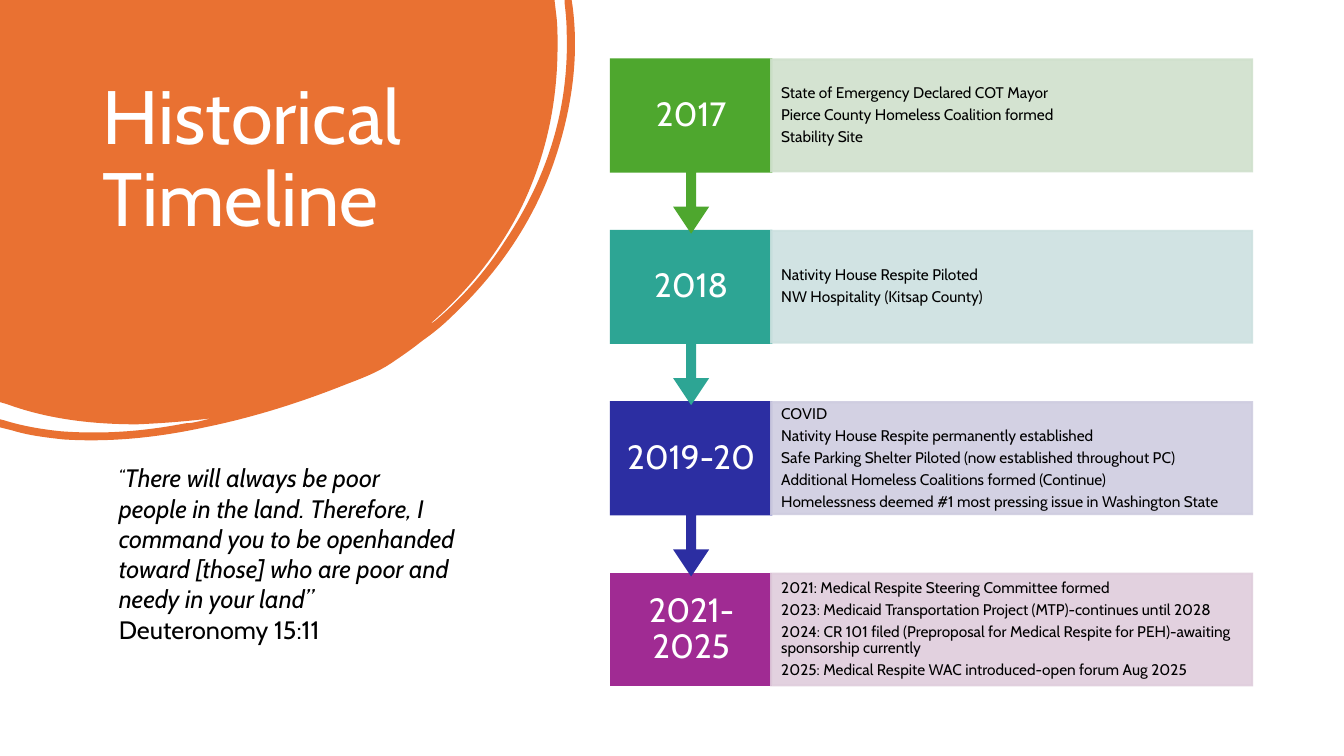
import pptx
import pptx.dml.color
import pptx.enum.shapes
import pptx.enum.text
import pptx.oxml
import pptx.oxml.ns
import pptx.util

Inches = pptx.util.Inches
Pt = pptx.util.Pt
RGBColor = pptx.dml.color.RGBColor
SHAPE = pptx.enum.shapes.MSO_SHAPE
ALIGN = pptx.enum.text.PP_ALIGN
ANCHOR = pptx.enum.text.MSO_ANCHOR
qn = pptx.oxml.ns.qn

FONT = "Cabin"
HARD_SPACE = chr(160)
WHITE = RGBColor(0xFF, 0xFF, 0xFF)
BLACK = RGBColor(0x00, 0x00, 0x00)
ORANGE = RGBColor(0xE9, 0x71, 0x32)
GREEN = RGBColor(0x4E, 0xA7, 0x2E)
PALE_GREEN = RGBColor(0xD0, 0xE1, 0xCD)
TEAL = RGBColor(0x2D, 0xA5, 0x94)
PALE_TEAL = RGBColor(0xCD, 0xE1, 0xE0)
BLUE = RGBColor(0x2C, 0x2E, 0xA2)
PALE_BLUE = RGBColor(0xCF, 0xCD, 0xE0)
PURPLE = RGBColor(0xA0, 0x2B, 0x93)
PALE_PURPLE = RGBColor(0xDF, 0xCD, 0xDC)

TOP, PITCH = 0.59, 1.7
YEAR_LEFT, YEAR_WIDTH = 6.06, 1.59
EVENT_LEFT, EVENT_WIDTH = 7.65, 4.77
BOX_HEIGHT, CALLOUT_HEIGHT = 1.11, 1.71

STAGES = [
    ("2017", GREEN, PALE_GREEN, [
        "State of Emergency Declared COT Mayor",
        "Pierce County Homeless Coalition formed",
        "Stability Site"]),
    ("2018", TEAL, PALE_TEAL, [
        "Nativity House Respite Piloted",
        "NW Hospitality (Kitsap County)"]),
    ("2019-20", BLUE, PALE_BLUE, [
        "COVID",
        "Nativity House Respite permanently established",
        "Safe Parking Shelter Piloted (now established throughout PC)",
        "Additional Homeless Coalitions formed (Continue)",
        "Homelessness deemed #1 most pressing issue in Washington State"]),
    ("2021-2025", PURPLE, PALE_PURPLE, [
        "2021: Medical Respite Steering Committee formed",
        "2023: Medicaid Transportation Project (MTP)-continues until 2028",
        "2024: CR 101 filed (Preproposal for Medical Respite for PEH)-awaiting "
        "sponsorship currently",
        "2025: Medical Respite WAC introduced-open forum Aug 2025"]),
]

BLOB = [
    (0, 0), (5.5, 0), (5.52, 0.17),
    (5.53, 0.26, 5.53, 0.36, 5.53, 0.45), (5.53, 1.01, 5.42, 1.54, 5.18, 2.04),
    (4.96, 2.49, 4.65, 2.88, 4.27, 3.21), (4.29, 3.21, 4.3, 3.19, 4.32, 3.18),
    (4.59, 2.95, 4.82, 2.69, 5.01, 2.39), (5.43, 1.76, 5.65, 1.07, 5.62, 0.3),
    (5.62, 0.21, 5.61, 0.12, 5.6, 0.03), (5.6, 0), (5.67, 0), (5.68, 0.07),
    (5.74, 0.54, 5.68, 1.02, 5.53, 1.5), (5.33, 2.14, 4.97, 2.68, 4.48, 3.14),
    (4.39, 3.23, 4.29, 3.31, 4.19, 3.38), (4.09, 3.46, 3.99, 3.53, 3.87, 3.61),
    (3.75, 3.69, 3.6, 3.75, 3.44, 3.81), (2.99, 3.99, 2.52, 4.14, 2.03, 4.24),
    (1.57, 4.34, 1.1, 4.39, 0.63, 4.36), (0.45, 4.34, 0.28, 4.32, 0.12, 4.27),
    (0, 4.24), (0, 4.16), (0.04, 4.17),
    (0.23, 4.23, 0.42, 4.26, 0.61, 4.28), (1.03, 4.31, 1.43, 4.28, 1.84, 4.2),
    (1.89, 4.2, 1.93, 4.19, 1.98, 4.18), (2.02, 4.17, 2.06, 4.16, 2.1, 4.15),
    (1.86, 4.18, 1.61, 4.2, 1.36, 4.21), (0.92, 4.21, 0.48, 4.16, 0.07, 4.01),
    (0, 3.99),
]


def style_font(font, size, color):
    """Give a font the deck's typeface with a size and colour."""
    font.name = FONT
    font.size = Pt(size)
    font.color.rgb = color


def bend_segments(shape, segments):
    """Turn each line whose segment has control points into a Bézier curve."""
    lines = list(shape.element.spPr.iter(qn("a:lnTo")))
    for line, segment in zip(lines, segments):
        if len(segment) == 6:
            line.tag = qn("a:cubicBezTo")
            for index in (0, 1):
                point = line.makeelement(qn("a:pt"), {
                    "x": str(Inches(segment[2 * index])),
                    "y": str(Inches(segment[2 * index + 1]))})
                line.insert(index, point)


def add_blob(slide):
    """Draw the orange corner shape with its outer ring."""
    start, *segments = BLOB
    builder = slide.shapes.build_freeform(*start)
    ends = [(Inches(segment[-2]), Inches(segment[-1])) for segment in segments]
    builder.add_line_segments(ends, close=True)
    blob = builder.convert_to_shape()
    bend_segments(blob, segments)
    blob.shadow.inherit = False
    blob.fill.solid()
    blob.fill.fore_color.rgb = ORANGE
    blob.line.fill.background()
    return blob


def place_title(title, text):
    """Move and format the title placeholder."""
    title.left, title.top = Inches(0.92), Inches(0.74)
    title.width, title.height = Inches(3.52), Inches(2.22)
    frame = title.text_frame
    frame.text = text
    frame.word_wrap = True
    frame.auto_size = pptx.enum.text.MSO_AUTO_SIZE.NONE
    frame.vertical_anchor = ANCHOR.TOP
    para = frame.paragraphs[0]
    para.alignment = ALIGN.LEFT
    para.line_spacing = 0.9
    style_font(para.runs[0].font, 54, WHITE)


def add_box(slide, kind, left, top, width, height, color):
    """Add a filled shape with a sharp-cornered outline of the same colour."""
    box = slide.shapes.add_shape(
        kind, Inches(left), Inches(top), Inches(width), Inches(height))
    box.shadow.inherit = False
    box.fill.solid()
    box.fill.fore_color.rgb = color
    box.line.color.rgb = color
    box.line.width = Pt(1.5)
    outline = box.element.spPr.find(qn("a:ln"))
    outline.append(outline.makeelement(qn("a:miter"), {"lim": "800000"}))
    return box


def fill_text(box, lines, size, color, alignment, side, edge):
    """Write vertically centred paragraphs into a box."""
    frame = box.text_frame
    frame.word_wrap = True
    frame.vertical_anchor = ANCHOR.MIDDLE
    frame.margin_left = frame.margin_right = Inches(side)
    frame.margin_top = frame.margin_bottom = Inches(edge)
    frame.text = "\n".join(lines)
    for para in frame.paragraphs:
        para.alignment = alignment
        para.line_spacing = 0.9
        para.space_after = Pt(0.35 * size)
        style_font(para.runs[0].font, size, color)


def make_translucent(box, percent):
    """Set the opacity of a box's fill and outline."""
    for color in box.element.spPr.iter(qn("a:srgbClr")):
        color.append(color.makeelement(qn("a:alpha"), {"val": str(percent * 1000)}))


def add_stage(slide, top, stage, is_last):
    """Add a year box, with an arrow unless it is last, and its events."""
    year, color, pale, events = stage
    if is_last:
        box = add_box(slide, SHAPE.RECTANGLE, YEAR_LEFT, top, YEAR_WIDTH, BOX_HEIGHT, color)
    else:
        box = add_box(slide, SHAPE.DOWN_ARROW_CALLOUT, YEAR_LEFT, top,
                      YEAR_WIDTH, CALLOUT_HEIGHT, color)
        for index, value in enumerate((0.05, 0.1, 0.15, 0.65)):
            box.adjustments[index] = value
    fill_text(box, [year], 24, WHITE, ALIGN.CENTER, 0.11, 0.19)
    panel = add_box(slide, SHAPE.RECTANGLE, EVENT_LEFT, top, EVENT_WIDTH, BOX_HEIGHT, pale)
    make_translucent(panel, 90)
    fill_text(panel, events, 11, BLACK, ALIGN.LEFT, 0.1, 0.15)


def add_quote(slide):
    """Add the italic quotation and its reference."""
    box = slide.shapes.add_textbox(Inches(1.08), Inches(4.54), Inches(3.54), Inches(2.22))
    frame = box.text_frame
    frame.word_wrap = True
    quote = frame.paragraphs[0]
    mark, words = quote.add_run(), quote.add_run()
    mark.text = "“"
    words.text = (f"There will always be poor people{HARD_SPACE}in the land. Therefore, "
                  "I command you to be openhanded toward [those] who are poor and "
                  "needy in your land”")
    reference = frame.add_paragraph().add_run()
    reference.text = "Deuteronomy 15:11"
    for span in (mark, words, reference):
        style_font(span.font, 18, BLACK)
        span.font.italic = span is not reference
    mark.font.bold = True
    mark.font._element.set("baseline", "30000")


def main():
    """Build the timeline slide and save it."""
    deck = pptx.Presentation()
    deck.slide_width, deck.slide_height = Inches(13.33), Inches(7.5)
    slide = deck.slides.add_slide(deck.slide_layouts[5])
    title = slide.shapes.title
    place_title(title, "Historical Timeline")
    add_blob(slide).element.addnext(title.element)
    last = len(STAGES) - 1
    for index in range(last, -1, -1):
        add_stage(slide, TOP + index * PITCH, STAGES[index], index == last)
    add_quote(slide)
    deck.save("out.pptx")


if __name__ == "__main__":
    main()
